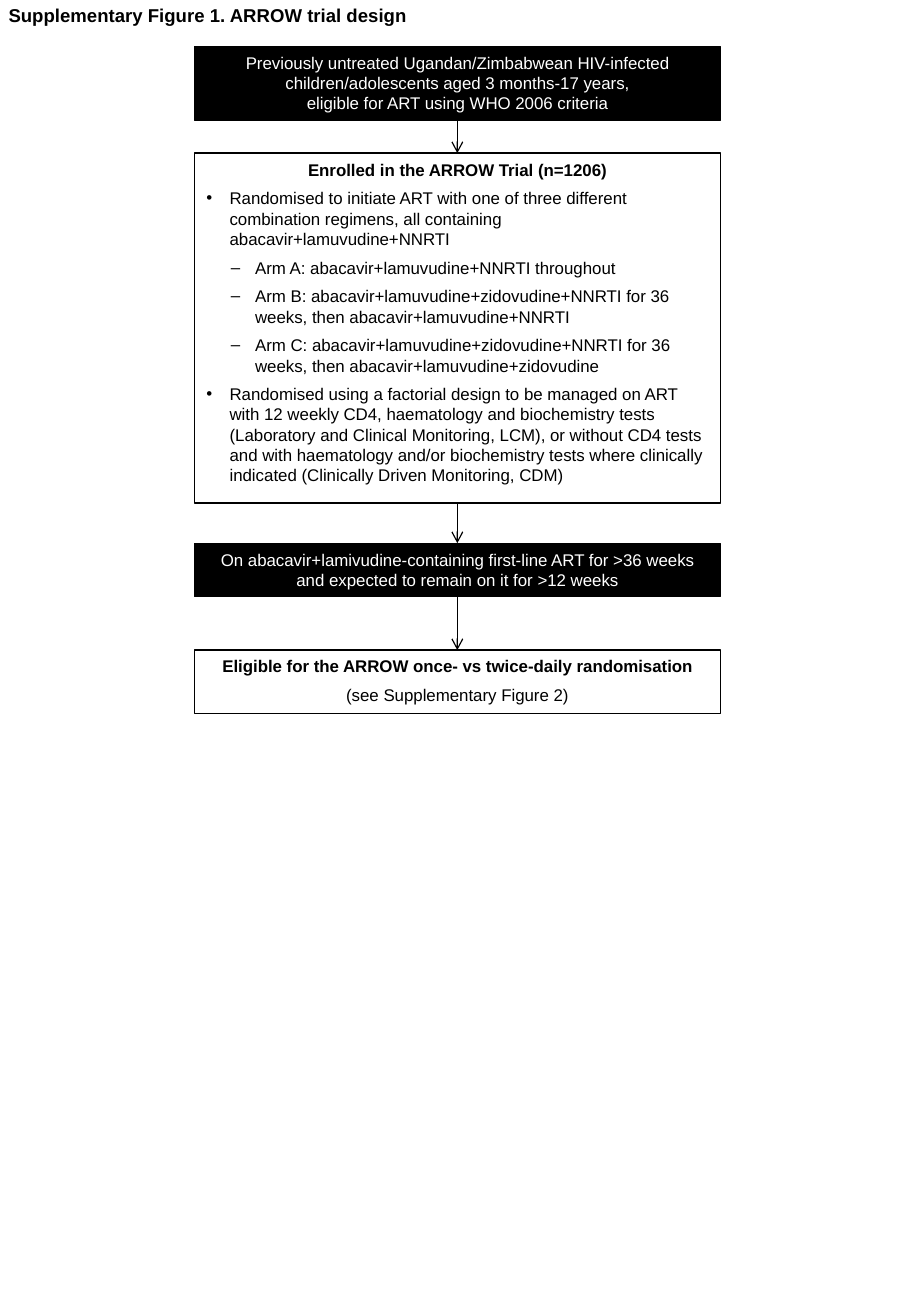
import pptx
import pptx.util
import pptx.dml.color
import pptx.enum.shapes
import pptx.enum.text
import lxml.etree
from dataclasses import dataclass
from pptx.util import Inches, Pt

RGB = pptx.dml.color.RGBColor
ALIGN = pptx.enum.text.PP_ALIGN


@dataclass(frozen=True)
class Theme:
    font: str = "Arial"
    ink: RGB = RGB(0, 0, 0)
    paper: RGB = RGB(255, 255, 255)
    title_size: Pt = Pt(11)
    text_size: Pt = Pt(10)
    line_width: Pt = Pt(0.75)
    gap: Pt = Pt(5)


THEME = Theme()
BOX_LEFT, BOX_WIDTH = 1.6, 4.33

# Bullet character, left margin and hanging indent for each list level
BULLETS = [("•", 0.19, 0.19), ("–", 0.4, 0.2)]


@dataclass(frozen=True)
class Para:
    text: str
    bold: bool = False
    level: int | None = None  # None means centred, without a bullet


ELIGIBLE_CHILDREN = [Para(
    "Previously untreated Ugandan/Zimbabwean HIV-infected "
    "children/adolescents aged 3 months-17 years,\v"
    "eligible for ART using WHO 2006 criteria")]
ENROLLED = [
    Para("Enrolled in the ARROW Trial (n=1206)", bold=True),
    Para("Randomised to initiate ART with one of three different combination "
         "regimens, all containing abacavir+lamuvudine+NNRTI", level=0),
    Para("Arm A: abacavir+lamuvudine+NNRTI throughout", level=1),
    Para("Arm B: abacavir+lamuvudine+zidovudine+NNRTI for 36 weeks, "
         "then abacavir+lamuvudine+NNRTI", level=1),
    Para("Arm C: abacavir+lamuvudine+zidovudine+NNRTI for 36 weeks, "
         "then abacavir+lamuvudine+zidovudine", level=1),
    Para("Randomised using a factorial design to be managed on ART with 12 weekly "
         "CD4, haematology and biochemistry tests (Laboratory and Clinical "
         "Monitoring, LCM), or without CD4 tests and with haematology and/or "
         "biochemistry tests where clinically indicated (Clinically Driven "
         "Monitoring, CDM)", level=0),
]
FIRST_LINE = [Para("On abacavir+lamivudine-containing first-line ART for >36 weeks "
                   "and expected to remain on it for >12 weeks")]
RANDOMISATION = [
    Para("Eligible for the ARROW once- vs twice-daily randomisation", bold=True),
    Para("(see Supplementary Figure 2)"),
]


def add_xml(parent, tag, **attributes):
    return lxml.etree.SubElement(parent, pptx.oxml.ns.qn(tag), attributes)


def place(shape, left, top, width, height):
    shape.left, shape.top = Inches(left), Inches(top)
    shape.width, shape.height = Inches(width), Inches(height)


def set_bullet(paragraph, level):
    properties = paragraph._p.get_or_add_pPr()
    if level is None:
        properties.set("marL", "0")
        properties.set("indent", "0")
        add_xml(properties, "a:buNone")
        return
    mark, margin, hanging = BULLETS[level]
    properties.set("marL", str(Inches(margin)))
    properties.set("indent", str(-Inches(hanging)))
    add_xml(properties, "a:buFont", typeface=THEME.font)
    add_xml(properties, "a:buChar", char=mark)
    paragraph.level = level


def set_font(paragraph, size, color, bold):
    font = paragraph.font
    font.name, font.size, font.bold = THEME.font, size, bold
    font.color.rgb = color


def prepare_frame(shape):
    frame = shape.text_frame
    frame.word_wrap = True
    frame.auto_size = pptx.enum.text.MSO_AUTO_SIZE.NONE
    frame.vertical_anchor = pptx.enum.text.MSO_ANCHOR.TOP
    return frame


def write_title(title, text):
    place(title, -0.03, -0.02, 4.07, 0.29)
    frame = prepare_frame(title)
    frame.text = text
    heading = frame.paragraphs[0]
    heading.alignment = ALIGN.LEFT
    set_font(heading, THEME.title_size, THEME.ink, True)


def write_box(box, top, height, paras, dark=False):
    """Format one step of the flow chart and fill in its paragraphs."""
    place(box, BOX_LEFT, top, BOX_WIDTH, height)
    box.shadow.inherit = False
    box.line.color.rgb = THEME.ink
    box.line.width = THEME.line_width
    if dark:
        box.fill.solid()
        box.fill.fore_color.rgb = THEME.ink
    else:
        box.fill.background()
    frame = prepare_frame(box)
    for index, para in enumerate(paras):
        paragraph = frame.add_paragraph() if index else frame.paragraphs[0]
        paragraph.text = para.text
        set_bullet(paragraph, para.level)
        paragraph.alignment = ALIGN.CENTER if para.level is None else ALIGN.LEFT
        paragraph.space_before = THEME.gap if index else Pt(0)
        set_font(paragraph, THEME.text_size,
                 THEME.paper if dark else THEME.ink, para.bold)


def add_arrow(slide, upper, lower):
    """Join the bottom of one box to the top of the next."""
    arrow = slide.shapes.add_connector(
        pptx.enum.shapes.MSO_CONNECTOR.STRAIGHT, 0, 0, 0, 0)
    arrow.begin_connect(upper, 2)
    arrow.end_connect(lower, 0)
    arrow.line.color.rgb = THEME.ink
    arrow.line.width = THEME.line_width
    add_xml(arrow.line._get_or_add_ln(), "a:tailEnd", type="arrow")
    add_xml(arrow._element.spPr, "a:effectLst")


def main():
    deck = pptx.Presentation()
    deck.slide_width, deck.slide_height = Inches(7.5), Inches(10.83)
    slide = deck.slides.add_slide(deck.slide_layouts[1])
    write_title(slide.shapes.title, "Supplementary Figure 1. ARROW trial design")

    # Flow chart steps; the enrolment list uses the body placeholder
    enrolled = slide.placeholders[1]
    children, first_line, randomisation = (
        slide.shapes.add_shape(pptx.enum.shapes.MSO_SHAPE.RECTANGLE, 0, 0, 0, 0)
        for _ in range(3))
    write_box(children, 0.38, 0.61, ELIGIBLE_CHILDREN, dark=True)
    write_box(enrolled, 1.26, 2.88, ENROLLED)
    write_box(first_line, 4.47, 0.44, FIRST_LINE, dark=True)
    write_box(randomisation, 5.35, 0.52, RANDOMISATION)

    # Arrows between consecutive steps
    steps = [children, enrolled, first_line, randomisation]
    for upper, lower in zip(steps, steps[1:]):
        add_arrow(slide, upper, lower)

    deck.save("out.pptx")


if __name__ == "__main__":
    main()
